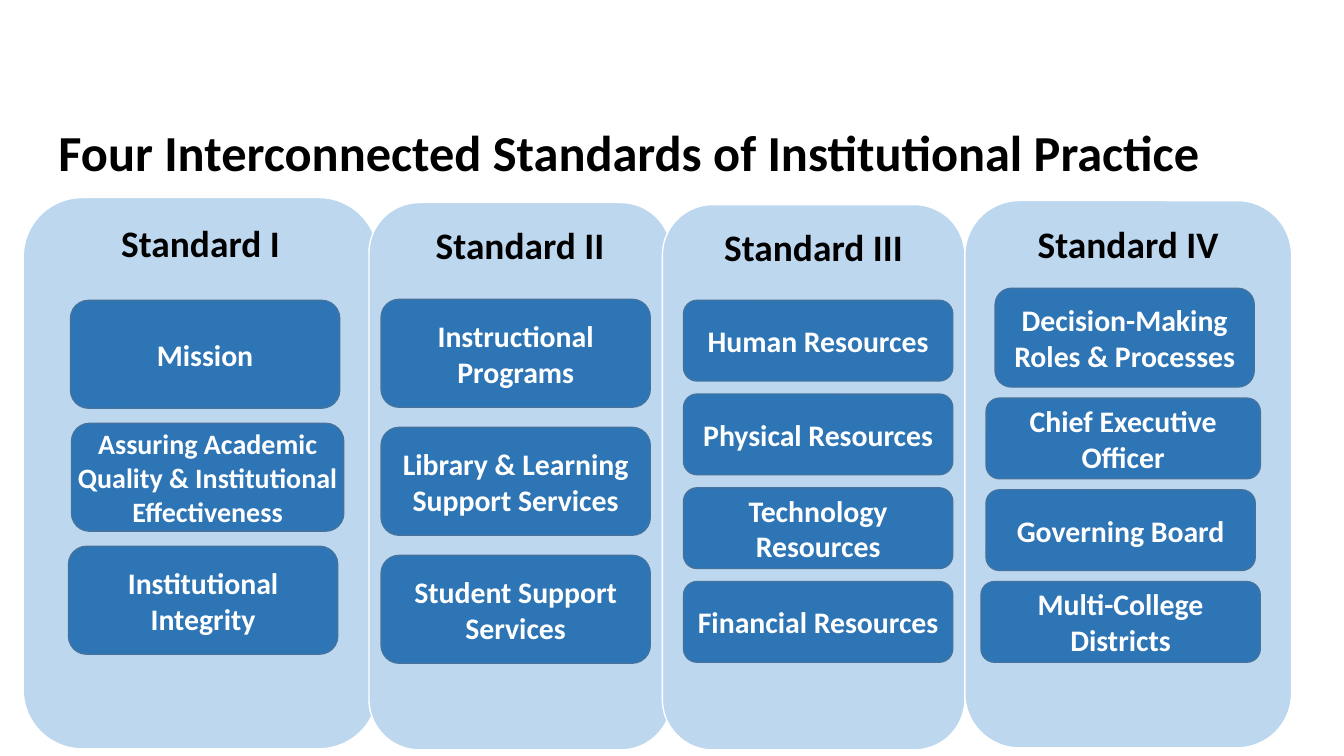
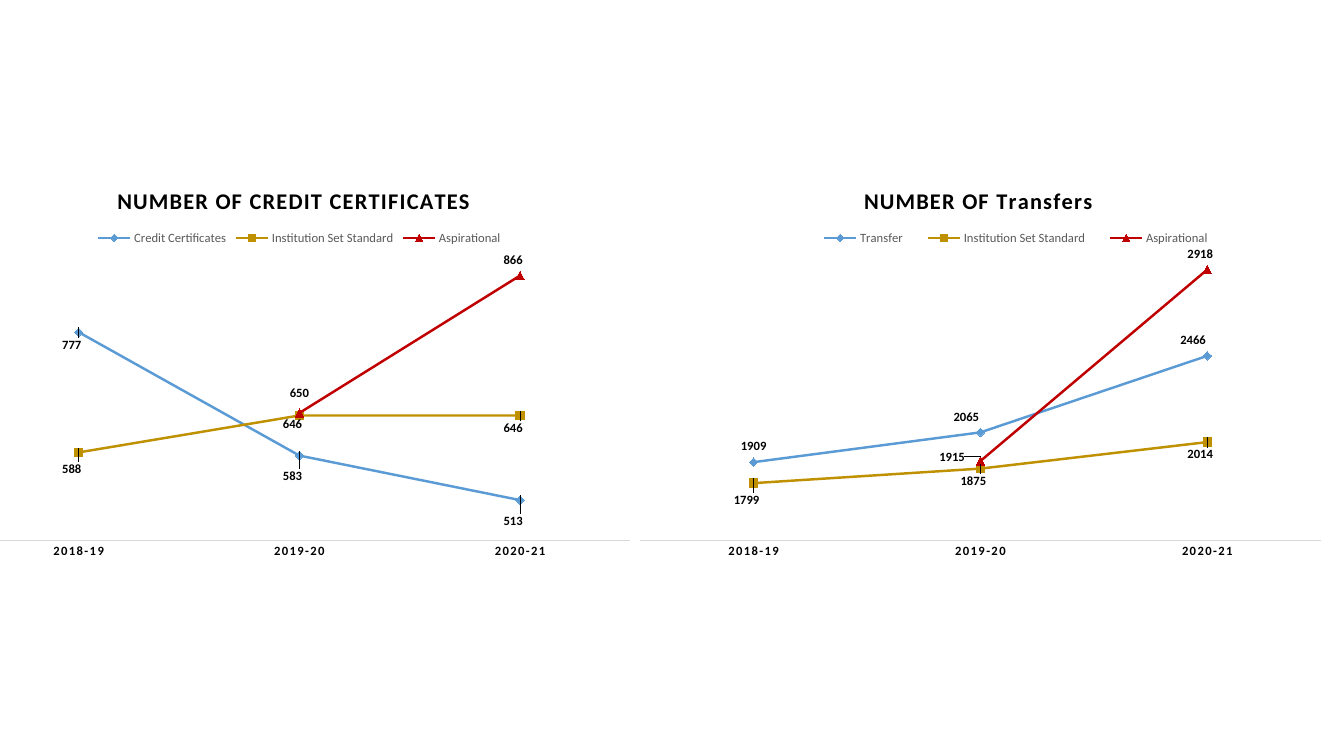
from dataclasses import dataclass

from lxml.etree import SubElement
from pptx import Presentation
from pptx.chart.data import CategoryChartData
from pptx.dml.color import RGBColor
from pptx.enum.chart import (XL_CHART_TYPE, XL_LABEL_POSITION, XL_LEGEND_POSITION,
                             XL_MARKER_STYLE, XL_TICK_MARK)
from pptx.enum.shapes import MSO_SHAPE
from pptx.enum.text import MSO_ANCHOR, PP_ALIGN
from pptx.oxml.ns import qn
from pptx.util import Inches, Pt


@dataclass(frozen=True)
class Theme:
    font: str = "Calibri"
    black: str = "000000"
    white: str = "FFFFFF"
    grey: str = "595959"
    axis: str = "D9D9D9"
    panel: str = "BDD7EE"
    box: str = "2E75B6"
    box_line: str = "43739E"
    title: float = 36
    heading: float = 26.7
    body: float = 21.3
    body_small: float = 20
    chart_title: float = 16
    chart: float = 10
    chart_small: float = 9


THEME = Theme()

# Heading, panel (left, top, width, height), first box top, gap, box heights,
# boxes (text, left, width)
STANDARDS = [
    ("Standard I", (0.23, 1.96, 3.52, 5.47), 2.98, 0.15, [1.07] * 3, [
        ("Mission", 0.7, 2.67),
        ("Assuring Academic Quality & Institutional Effectiveness", 0.71, 2.7),
        ("Institutional Integrity", 0.68, 2.67)]),
    ("Standard II", (3.66, 2.01, 3, 5.43), 2.97, 0.2, [1.07] * 3, [
        ("Instructional Programs", 3.78, 2.67),
        ("Library & Learning Support Services", 3.78, 2.67),
        ("Student Support Services", 3.78, 2.67)]),
    ("Standard III", (6.57, 2.03, 3, 5.41), 2.98, 0.13, [0.8] * 4, [
        ("Human Resources", 6.78, 2.67),
        ("Physical Resources", 6.78, 2.67),
        ("Technology Resources", 6.78, 2.67),
        ("Financial Resources", 6.78, 2.67)]),
    ("Standard IV", (9.57, 1.99, 3.24, 5.43), 2.86, 0.11, [0.98] + [0.8] * 3, [
        ("Decision-Making Roles & Processes", 9.87, 2.57),
        ("Chief Executive Officer", 9.78, 2.72),
        ("Governing Board", 9.78, 2.67),
        ("Multi-College Districts", 9.73, 2.77)]),
]
SMALL_TEXT = {"Assuring Academic Quality & Institutional Effectiveness"}

YEARS = ["2018-19", "2019-20", "2020-21"]
SERIES_STYLES = [("5B9BD5", XL_MARKER_STYLE.DIAMOND),
                 ("BF9000", XL_MARKER_STYLE.SQUARE),
                 ("C00000", XL_MARKER_STYLE.TRIANGLE)]

# Each series: name, values, label shifts by point as shares of the chart size
CHARTS = [
    {"title": "NUMBER OF CREDIT CERTIFICATES", "frame": (-0.45, 1.64, 6.84, 4),
     "scale": (450, 900, 50), "title_x": 0.23, "legend_x": 0.2,
     "series": [
         ("Credit Certificates", (777, 583, 513),
          {0: (-0.01, 0.07), 1: (-0.01, 0.09), 2: (-0.01, 0.09)}),
         ("Institution Set Standard", (588, 646, 646),
          {0: (-0.01, 0.08), 1: (-0.01, 0.06), 2: (-0.01, 0.07)}),
         ("Aspirational", (None, 650, 866), {1: (0, -0.01), 2: (-0.01, 0)})]},
    {"title": "NUMBER OF Transfers", "frame": (6.21, 1.64, 7.03, 4),
     "scale": (1500, 3000, 200), "title_x": 0.33, "legend_x": 0.25,
     "series": [
         ("Transfer", (1909, 2065, 2466), {1: (-0.02, 0), 2: (-0.02, 0)}),
         ("Institution Set Standard", (1799, 1875, 2014),
          {0: (-0.01, 0.08), 1: (-0.01, 0.07), 2: (-0.01, 0.07)}),
         ("Aspirational", (None, 1915, 2918), {1: (-0.04, 0.03), 2: (-0.01, 0)})]},
]


def apply(target, values):
    for name, value in values.items():
        setattr(target, name, value)


def set_font(font, size, color=THEME.black, bold=True):
    apply(font, {"name": THEME.font, "size": Pt(size), "bold": bold})
    font.color.rgb = RGBColor.from_string(color)


def set_line(line, color, width):
    line.color.rgb = RGBColor.from_string(color)
    line.width = Pt(width)


# Standards slide
def add_title(slide, text):
    title = slide.shapes.title
    apply(title, {"left": Inches(0.48), "top": Inches(1.19),
                  "width": Inches(12.37), "height": Inches(0.7)})
    apply(title.text_frame, {"text": text, "word_wrap": True,
                             "vertical_anchor": MSO_ANCHOR.MIDDLE})
    paragraph = title.text_frame.paragraphs[0]
    apply(paragraph, {"alignment": PP_ALIGN.LEFT, "line_spacing": 0.9})
    set_font(paragraph.runs[0].font, THEME.title)


def add_round_box(slide, text, frame, fill, line, size, color, text_format):
    shape = slide.shapes.add_shape(MSO_SHAPE.ROUNDED_RECTANGLE, *map(Inches, frame))
    shape.shadow.inherit = False
    shape.fill.solid()
    shape.fill.fore_color.rgb = RGBColor.from_string(fill)
    set_line(shape.line, line, 1)
    apply(shape.text_frame, {"text": text, "word_wrap": True, **text_format})
    paragraph = shape.text_frame.paragraphs[0]
    paragraph.alignment = PP_ALIGN.CENTER
    set_font(paragraph.runs[0].font, size, color)


def add_standard(slide, heading, panel, top, gap, heights, boxes):
    add_round_box(slide, heading, panel, THEME.panel, THEME.white, THEME.heading,
                  THEME.black, {"vertical_anchor": MSO_ANCHOR.TOP})
    margins = ("margin_left", "margin_top", "margin_right", "margin_bottom")
    box_format = {"vertical_anchor": MSO_ANCHOR.MIDDLE, **dict.fromkeys(margins, 0)}
    for (text, left, width), height in zip(boxes, heights):
        size = THEME.body_small if text in SMALL_TEXT else THEME.body
        add_round_box(slide, text, (left, top, width, height), THEME.box,
                      THEME.box_line, size, THEME.white, box_format)
        top += height + gap


# Chart slide
def place(element, after, **values):
    """Give a chart part a manual layout, following the child named by after."""
    for layout in element.findall(qn("c:layout")):
        element.remove(layout)
    layout = element.makeelement(qn("c:layout"), {})
    manual = SubElement(layout, qn("c:manualLayout"))
    for name, value in values.items():
        SubElement(manual, qn(f"c:{name}")).set("val", str(value))
    if after:
        element.find(qn(after)).addnext(layout)
    else:
        element.insert(0, layout)


def style_series(series, color, marker_style, shifts):
    series.smooth = False
    set_line(series.format.line, color, 1.75)
    apply(series.marker, {"style": marker_style, "size": 6})
    series.marker.format.fill.solid()
    series.marker.format.fill.fore_color.rgb = RGBColor.from_string(color)
    set_line(series.marker.format.line, color, 0.75)

    labels = series.data_labels
    apply(labels, {"show_value": True, "position": XL_LABEL_POSITION.ABOVE})
    set_font(labels.font, THEME.chart_small)
    for index in shifts:
        label = series.points[index].data_label
        set_font(label.font, THEME.chart_small)
        label.position = XL_LABEL_POSITION.ABOVE
    for element, (x, y) in zip(series._element.iter(qn("c:dLbl")), shifts.values()):
        place(element, "c:idx", x=x, y=y)


def style_axes(chart, scale):
    minimum, maximum, major = scale
    apply(chart.value_axis, {"minimum_scale": minimum, "maximum_scale": maximum,
                             "major_unit": major, "has_major_gridlines": False,
                             "visible": False})
    axis = chart.category_axis
    apply(axis, {"major_tick_mark": XL_TICK_MARK.NONE,
                 "minor_tick_mark": XL_TICK_MARK.NONE,
                 "has_major_gridlines": False})
    set_line(axis.format.line, THEME.axis, 0.75)
    font = axis.tick_labels.font
    set_font(font, THEME.chart_small)
    font._element.set("spc", "100")


def add_line_chart(slide, content):
    data = CategoryChartData()
    data.categories = YEARS
    for name, values, _ in content["series"]:
        data.add_series(name, values)
    chart = slide.shapes.add_chart(XL_CHART_TYPE.LINE_MARKERS,
                                   *map(Inches, content["frame"]), data).chart
    set_font(chart.font, THEME.chart, bold=False)
    chart.plots[0].vary_by_categories = False
    style_axes(chart, content["scale"])

    # Title and legend
    apply(chart, {"has_title": True, "has_legend": True})
    title_frame = chart.chart_title.text_frame
    title_frame.text = content["title"]
    font = title_frame.paragraphs[0].runs[0].font
    set_font(font, THEME.chart_title)
    font._element.set("spc", "100")
    apply(chart.legend, {"position": XL_LEGEND_POSITION.TOP, "include_in_layout": False})
    set_font(chart.legend.font, THEME.chart_small, THEME.grey, bold=False)

    for series, style, (_, _, shifts) in zip(chart.plots[0].series, SERIES_STYLES,
                                             content["series"]):
        style_series(series, *style, shifts)

    # Positions inside the chart
    title, legend, plot_area = (chart.element.find(f".//{qn(tag)}")
                                for tag in ("c:title", "c:legend", "c:plotArea"))
    edge = {"xMode": "edge", "yMode": "edge"}
    place(title, "c:tx", **edge, x=content["title_x"], y=0.04)
    place(legend, "c:legendPos", **edge, x=content["legend_x"], y=0.14, w=0.6, h=0.08)
    place(plot_area, None, layoutTarget="inner", **edge, x=0.02, y=0.22, w=0.96, h=0.71)


def main():
    presentation = Presentation()
    apply(presentation, {"slide_width": Inches(13.33), "slide_height": Inches(7.5)})
    title_only, blank = presentation.slide_layouts[5], presentation.slide_layouts[6]

    slide = presentation.slides.add_slide(title_only)
    add_title(slide, "Four Interconnected Standards of Institutional Practice")
    for standard in STANDARDS:
        add_standard(slide, *standard)

    slide = presentation.slides.add_slide(blank)
    for content in CHARTS:
        add_line_chart(slide, content)

    presentation.save("out.pptx")


if __name__ == "__main__":
    main()
